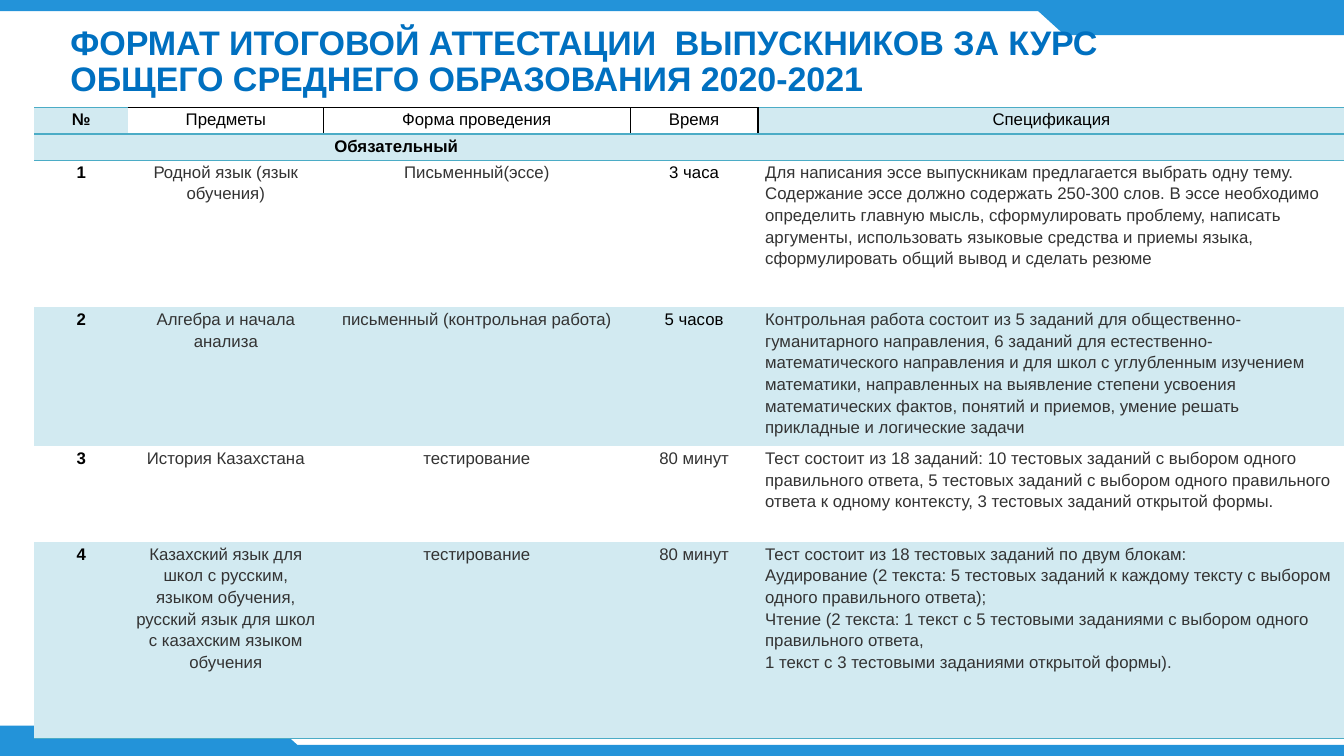
from lxml import etree
from pptx import Presentation
from pptx import util as u
from pptx.dml.color import RGBColor
from pptx.enum import shapes, text
from pptx.oxml.ns import qn

BLUE = RGBColor(0x23, 0x93, 0xD9)
TITLE_BLUE = RGBColor(0x00, 0x70, 0xC0)
PALE = RGBColor(0xD2, 0xEA, 0xF1)
TEAL = RGBColor(0x4B, 0xAC, 0xC6)
BLACK = RGBColor(0, 0, 0)
GREY = RGBColor(0x33, 0x33, 0x33)

FONT = "Arial"
PLAIN_STYLE = "{2D5ABB26-0587-4C30-8999-92F81FD0307C}"
TITLE = "ФОРМАТ ИТОГОВОЙ АТТЕСТАЦИИ  ВЫПУСКНИКОВ ЗА КУРС ОБЩЕГО СРЕДНЕГО ОБРАЗОВАНИЯ 2020-2021"

COLUMN_WIDTHS = [0.93, 1.94, 3.04, 1.27, 5.82]
ROW_HEIGHTS = [0.26, 0.26, 1.46, 1.35, 0.95, 1.95]
ROWS = [
    ["№", "Предметы", "Форма проведения", "Время", "Спецификация"],
    ["Обязательный", "", "", "", ""],
    ["1", "Родной язык (язык обучения)", "Письменный(эссе)", "3 часа",
     "Для написания эссе выпускникам предлагается выбрать одну тему. "
     "Содержание эссе должно содержать 250-300 слов. В эссе необходимо "
     "определить главную мысль, сформулировать проблему, написать аргументы, "
     "использовать языковые средства и приемы языка, сформулировать общий "
     "вывод и сделать резюме"],
    ["2", "Алгебра и начала анализа", "письменный (контрольная работа)", "5 часов",
     "Контрольная работа состоит из 5 заданий для общественно-гуманитарного "
     "направления, 6 заданий для естественно-математического направления и для "
     "школ с углубленным изучением математики, направленных на выявление степени "
     "усвоения математических фактов, понятий и приемов, умение решать "
     "прикладные и логические задачи"],
    ["3", "История Казахстана", "тестирование", "80 минут",
     "Тест состоит из 18 заданий: 10 тестовых заданий с выбором одного правильного "
     "ответа, 5 тестовых заданий с выбором одного правильного ответа к одному "
     "контексту, 3 тестовых заданий открытой формы."],
    ["4", "Казахский язык для школ с русским, языком обучения, русский язык для "
     "школ с казахским языком обучения", "тестирование", "80 минут",
     "Тест состоит из 18 тестовых заданий по двум блокам:\n"
     "Аудирование (2 текста: 5 тестовых заданий к каждому тексту с выбором одного "
     "правильного ответа);\n"
     "Чтение (2 текста: 1 текст с 5 тестовыми заданиями с выбором одного "
     "правильного ответа,\n"
     "1 текст с 3 тестовыми заданиями открытой формы)."],
]
LAST_ROW, SPEC = len(ROWS) - 1, len(COLUMN_WIDTHS) - 1


def add_band(page, kind, left, top, width, height, rotation=0):
    band = page.shapes.add_shape(kind, u.Inches(left), u.Inches(top),
                                 u.Inches(width), u.Inches(height))
    band.rotation = rotation
    band.shadow.inherit = False
    band.fill.solid()
    band.fill.fore_color.rgb = BLUE
    band.line.fill.background()


def style_font(font, size, color, bold):
    font.name = FONT
    font.size = u.Pt(size)
    font.bold = bold
    font.color.rgb = color


def add_title(page):
    box = page.shapes.add_textbox(u.Inches(0.6), u.Inches(0.4),
                                  u.Inches(11.81), u.Inches(0.44))
    frame = box.text_frame
    frame.word_wrap = True
    frame.vertical_anchor = text.MSO_ANCHOR.MIDDLE
    frame.margin_right = u.Inches(0.5)
    frame.text = TITLE
    para = frame.paragraphs[0]
    para.line_spacing = 0.9
    style_font(para.runs[0].font, 24.3, TITLE_BLUE, True)


def add_border(cell, side, color, points):
    props = cell._tc.get_or_add_tcPr()
    line = etree.SubElement(props, qn(f"a:ln{side}"), w=str(u.Pt(points)))
    fill = etree.SubElement(line, qn("a:solidFill"))
    etree.SubElement(fill, qn("a:srgbClr"), val=str(color))


def add_cell_borders(cell, row, column):
    # Black frame for the middle headings, teal rules elsewhere
    if row == 0 and 0 < column < SPEC:
        add_border(cell, "R", BLACK, 1.5 if column == SPEC - 1 else 1)
        add_border(cell, "T", BLACK, 1)
    elif row < 2:
        add_border(cell, "T", TEAL, 1)
    if row in (0, LAST_ROW):
        add_border(cell, "B", TEAL, 1)


def fill_cell(cell, row, column):
    add_cell_borders(cell, row, column)
    if row % 2 or (row == 0 and column in (0, SPEC)):
        cell.fill.solid()
        cell.fill.fore_color.rgb = PALE
    else:
        cell.fill.background()

    cell.margin_left = cell.margin_right = u.Inches(0.07)
    cell.margin_top = cell.margin_bottom = 0
    cell.text_frame.text = ROWS[row][column]
    black = row < 2 or column == 0 or (column == 3 and row < 4)
    for para in cell.text_frame.paragraphs:
        para.line_spacing = 1.15
        centred = row < 2 or column < SPEC
        para.alignment = text.PP_ALIGN.CENTER if centred else text.PP_ALIGN.LEFT
        for span in para.runs:
            style_font(span.font, 12, BLACK if black else GREY, column == 0)
        if not para.runs:
            etree.SubElement(para._p, qn("a:endParaRPr"), sz="1200")


def add_exam_table(page):
    frame = page.shapes.add_table(
        len(ROWS), len(COLUMN_WIDTHS), u.Inches(0.34), u.Inches(1.07),
        u.Inches(sum(COLUMN_WIDTHS)), u.Inches(sum(ROW_HEIGHTS)))
    table = frame.table
    table.first_row = table.horz_banding = False
    table._tbl.tblPr.find(qn("a:tableStyleId")).text = PLAIN_STYLE
    for column, width in zip(table.columns, COLUMN_WIDTHS):
        column.width = u.Inches(width)
    for row, height in zip(table.rows, ROW_HEIGHTS):
        row.height = u.Inches(height)
    for row in range(len(ROWS)):
        for column in range(len(COLUMN_WIDTHS)):
            fill_cell(table.cell(row, column), row, column)
    table.cell(1, 0).merge(table.cell(1, SPEC - 1))


def main():
    deck = Presentation()
    deck.slide_width, deck.slide_height = u.Inches(13.33), u.Inches(7.5)
    page = deck.slides.add_slide(deck.slide_layouts[6])

    # Top and bottom bands with slanted tabs
    rect = shapes.MSO_SHAPE.RECTANGLE
    slant = shapes.MSO_SHAPE.FLOWCHART_MERGE
    for top in (0, 7.39):
        add_band(page, rect, 0, top, 13.33, 0.11)
    add_band(page, rect, 10.55, 0.05, 2.78, 0.3)
    add_band(page, slant, 10.22, 0.04, 0.66, 0.3)
    add_band(page, rect, -0.04, 7.2, 2.78, 0.3)
    add_band(page, slant, 2.41, 7.2, 0.66, 0.3, 180)

    # Heading and exam table
    add_title(page)
    add_exam_table(page)
    deck.save("out.pptx")


if __name__ == "__main__":
    main()
